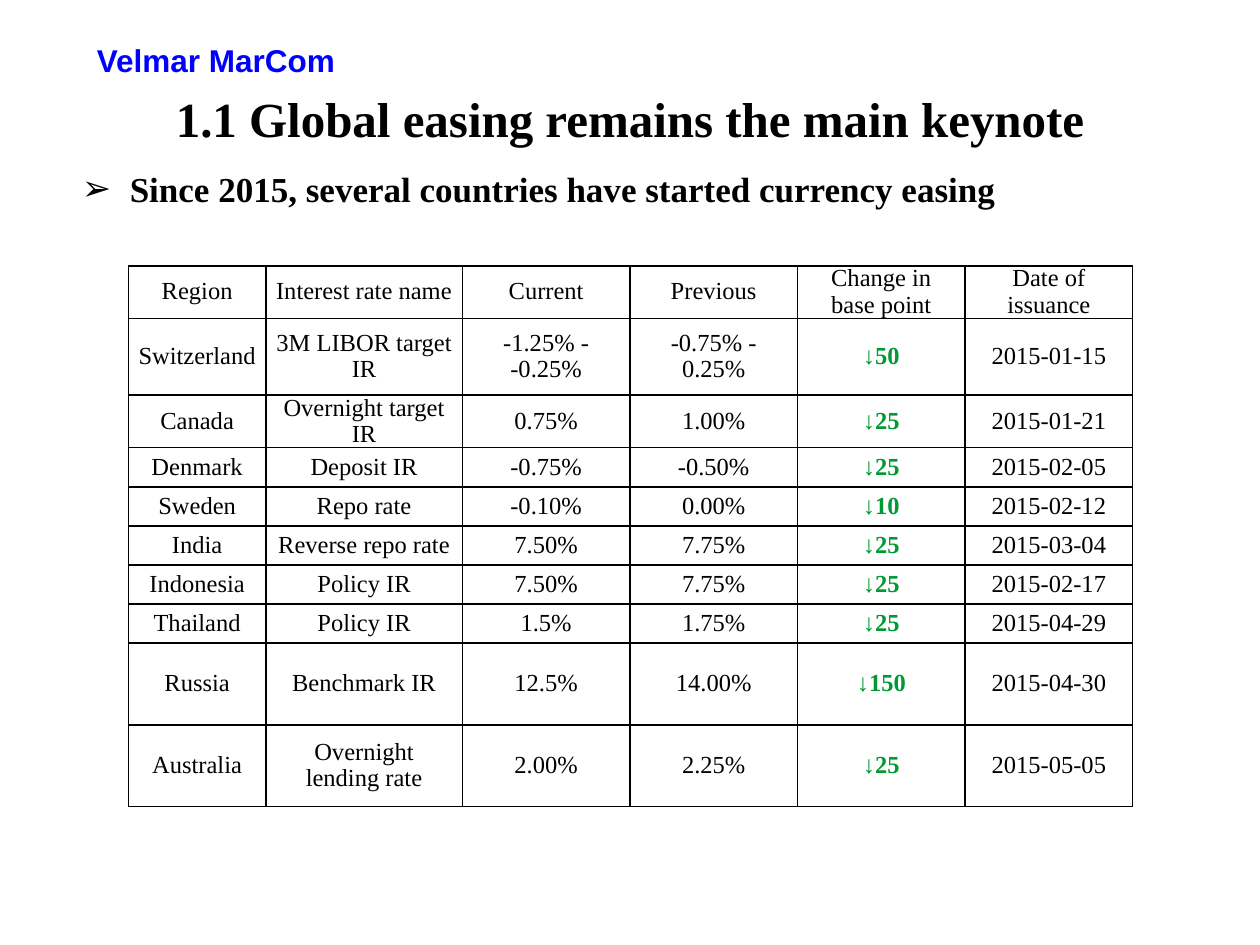
from lxml.etree import SubElement
from pptx import Presentation
from pptx.dml.color import RGBColor
from pptx.enum.text import MSO_ANCHOR, MSO_AUTO_SIZE, PP_ALIGN
from pptx.oxml.ns import qn
from pptx.util import Inches, Pt

SERIF = "Times New Roman"
BLACK, BLUE, GREEN, WHITE = "000000", "0000FF", "009933", "FFFFFF"
COLS = [1.09, 1.56] + [1.33] * 4
ROWS = [0.31, 0.61] + [0.31] * 6 + [0.65] * 2
HEAD = ["Region", "Interest rate name", "Current", "Previous",
        "Change in base point", "Date of issuance"]
RATES = [
    ["Switzerland", "3M LIBOR target IR", "-1.25% - -0.25%",
     "-0.75% - 0.25%", "↓50", "2015-01-15"],
    ["Canada", "Overnight target IR", "0.75%", "1.00%", "↓25", "2015-01-21"],
    ["Denmark", "Deposit IR", "-0.75%", "-0.50%", "↓25", "2015-02-05"],
    ["Sweden", "Repo rate", "-0.10%", "0.00%", "↓10", "2015-02-12"],
    ["India", "Reverse repo rate", "7.50%", "7.75%", "↓25", "2015-03-04"],
    ["Indonesia", "Policy IR", "7.50%", "7.75%", "↓25", "2015-02-17"],
    ["Thailand", "Policy IR", "1.5%", "1.75%", "↓25", "2015-04-29"],
    ["Russia", "Benchmark IR", "12.5%", "14.00%", "↓150", "2015-04-30"],
    ["Australia", "Overnight lending rate", "2.00%", "2.25%", "↓25",
     "2015-05-05"],
]


def paint(color):
    return RGBColor.from_string(color)


def style(par, size, color=BLACK, bold=True, face=SERIF):
    font = par.font
    font.size, font.name, font.bold = Pt(size), face, bold
    font.color.rgb = paint(color)


def place(shape, left, top, width, height):
    shape.left, shape.top = Inches(left), Inches(top)
    shape.width, shape.height = Inches(width), Inches(height)


def write(shape, text, anchor):
    """Fill a text shape and return its paragraph."""
    frame = shape.text_frame
    frame.text = text
    frame.word_wrap = True
    frame.auto_size = MSO_AUTO_SIZE.NONE
    frame.vertical_anchor = anchor
    par = frame.paragraphs[0]
    par.space_before = Pt(0)
    return par


def add_label(slide, text):
    box = slide.shapes.add_textbox(0, 0, 0, 0)
    place(box, 0.67, 0.33, 4.58, 0.34)
    par = write(box, text, MSO_ANCHOR.MIDDLE)
    par.line_spacing = 0.8
    style(par, 18, BLUE, face="Arial")


def set_title(slide, text):
    title = slide.shapes.title
    place(title, 0.5, 0.3, 9, 1.11)
    par = write(title, text, MSO_ANCHOR.MIDDLE)
    title.text_frame.margin_top = Inches(0.3)
    par.alignment = PP_ALIGN.CENTER
    par.line_spacing = 0.8
    style(par, 28)


def set_point(slide, text):
    body = slide.placeholders[1]
    place(body, 0.55, 1.28, 7.97, 0.44)
    par = write(body, text, MSO_ANCHOR.TOP)
    props = par._p.get_or_add_pPr()
    props.set("marL", str(Inches(0.38)))
    props.set("indent", str(-Inches(0.38)))
    SubElement(props, qn("a:buChar"), char="➢")
    style(par, 20)


def add_border(cell):
    props = cell._tc.get_or_add_tcPr()
    for side in ("lnL", "lnR", "lnT", "lnB"):
        line = SubElement(props, qn("a:" + side), w=str(Pt(1)))
        fill = SubElement(line, qn("a:solidFill"))
        SubElement(fill, qn("a:srgbClr"), val=BLACK)


def fill_cell(cell, text, change):
    cell.text = text
    cell.vertical_anchor = MSO_ANCHOR.MIDDLE
    cell.margin_left = cell.margin_right = Inches(0.07)
    cell.margin_top = cell.margin_bottom = 0
    par = cell.text_frame.paragraphs[0]
    par.alignment = PP_ALIGN.CENTER
    par.line_spacing = Pt(15)
    style(par, 14, GREEN if change else BLACK, change)
    # Borders come before the fill in the cell properties
    add_border(cell)
    cell.fill.solid()
    cell.fill.fore_color.rgb = paint(WHITE)


def add_rates(slide):
    frame = slide.shapes.add_table(
        len(ROWS), len(COLS), Inches(1.02), Inches(2.11),
        Inches(sum(COLS)), Inches(sum(ROWS)))
    table = frame.table
    table.first_row = table.horz_banding = False
    for col, width in zip(table.columns, COLS):
        col.width = Inches(width)
    for row, height in zip(table.rows, ROWS):
        row.height = Inches(height)
    for r, texts in enumerate([HEAD] + RATES):
        for c, text in enumerate(texts):
            fill_cell(table.cell(r, c), text, r > 0 and c == 4)


def main():
    deck = Presentation()
    deck.slide_width, deck.slide_height = Inches(10), Inches(7.5)
    slide = deck.slides.add_slide(deck.slide_layouts[1])
    # Heading
    add_label(slide, "Velmar MarCom")
    set_title(slide, "1.1 Global easing remains the main keynote")
    set_point(slide,
              "Since 2015, several countries have started currency easing")
    # Interest rates by region
    add_rates(slide)
    deck.save("out.pptx")


if __name__ == "__main__":
    main()
